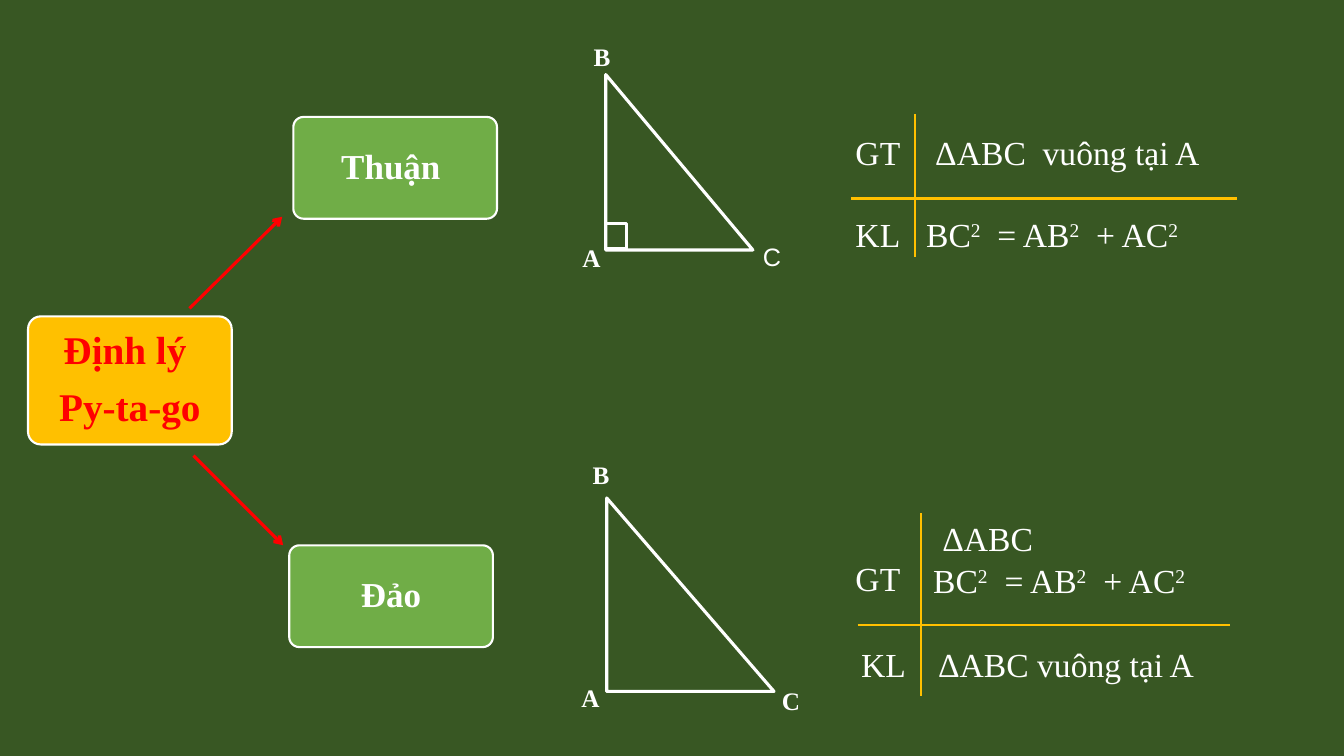
from lxml import etree
from pptx import Presentation
from pptx import util as u
from pptx.dml.color import RGBColor
from pptx.enum import shapes, text
from pptx.oxml.ns import qn

Pt = u.Pt

# Content: a tuple (text, True) is a superscript run
FORMULA = ["BC", ("2", True), "  = AB", ("2", True), "  + AC", ("2", True)]

# Cards: lines, position, size, fill, text colour, type size
CARDS = [
    (["Định lý ", "Py-ta-go"], (20, 226), (145.5, 91.5), "amber", "red", "root"),
    (["Thuận "], (209.5, 83.5), (145.5, 72.7), "green", "white", "branch"),
    (["Đảo"], (206.6, 389.5), (145.5, 72.7), "green", "white", "branch"),
]
ARROWS = [((135.4, 220.3), (201.6, 154.8)), ((138.2, 325.4), (202.3, 389.5))]

# Triangles: left, top, width, height
TRIANGLES = [(432.7, 53.3, 105.1, 125.3), (433.4, 355.7, 119.5, 138.2)]
RIGHT_ANGLE = (432.7, 159.8, 15.1, 18)

# Corner labels: letter, left, top, font, bold
LABELS = [
    ("B", 416.9, 25.9, "serif", True),
    ("A", 409, 169.2, "serif", True),
    ("C", 537.8, 168.5, "sans", False),
    ("B", 416.2, 324.7, "serif", True),
    ("A", 408.2, 483.8, "serif", True),
    ("C", 551.5, 486, "serif", True),
]

# Crossed rules of the two hypothesis / conclusion tables
RULES = [
    ((653.8, 81.4), (653.8, 183.6)), ((607.7, 141.8), (883.4, 141.8)),
    ((658.1, 366.5), (658.1, 496.8)), ((612.7, 446.4), (878.4, 446.4)),
]

# Statements: left, top, width, gap between lines, [(indent, runs)]
STATEMENTS = [
    (604, 90.7, 56, 29.5, [(0, ["GT"]), (0, ["KL"])]),
    (654.5, 90.7, 247, 29.5, [(6.5, ["ΔABC  vuông tại A"]), (0, FORMULA)]),
    (604, 395.1, 56, 0, [(0, ["GT"])]),
    (659.5, 366.5, 244, 1, [(6.5, ["ΔABC"]), (0, FORMULA)]),
    (608, 456.5, 56, 0, [(0, ["KL"])]),
    (663, 456.5, 220, 0, [(0, ["ΔABC vuông tại A"])]),
]

THEME = {
    "board": RGBColor.from_string("385723"),
    "white": RGBColor.from_string("FFFFFF"),
    "amber": RGBColor.from_string("FFC000"),
    "green": RGBColor.from_string("70AD47"),
    "red": RGBColor.from_string("FF0000"),
    "serif": "Times New Roman", "sans": "Arial",
    "root": 28, "branch": 25, "statement": 24, "label": 18,
    "thin": 1.5, "thick": 2.25,
}


def add_run(paragraph, words, size, color="white", font="serif", bold=False):
    run = paragraph.add_run()
    run.text = words
    run.font.size = Pt(THEME[size])
    run.font.name = THEME[font]
    run.font.bold = bold
    run.font.color.rgb = THEME[color]
    return run


def paragraph_at(frame, index):
    return frame.add_paragraph() if index else frame.paragraphs[0]


def add_outline(slide, kind, box, width, fill=None):
    shape = slide.shapes.add_shape(kind, *map(Pt, box))
    shape.shadow.inherit = False
    shape.line.color.rgb = THEME["white"]
    shape.line.width = Pt(THEME[width])
    if fill:
        shape.fill.solid()
        shape.fill.fore_color.rgb = THEME[fill]
    else:
        shape.fill.background()
    return shape


def add_line(slide, start, end, color, width, arrow=False):
    line = slide.shapes.add_connector(
        shapes.MSO_CONNECTOR.STRAIGHT, *map(Pt, start + end))
    line.line.color.rgb = THEME[color]
    line.line.width = Pt(THEME[width])
    if arrow:
        etree.SubElement(line.line._get_or_add_ln(), qn("a:tailEnd"), type="arrow")
    etree.SubElement(line._element.spPr, qn("a:effectLst"))


def add_card(slide, lines, position, size, fill, color, type_size):
    card = add_outline(slide, shapes.MSO_SHAPE.ROUNDED_RECTANGLE,
                       position + size, "thin", fill)
    card.adjustments[0] = 0.1
    frame = card.text_frame
    frame.word_wrap = True
    frame.vertical_anchor = text.MSO_ANCHOR.MIDDLE
    frame.margin_left = frame.margin_right = Pt(3.5)
    frame.margin_top = frame.margin_bottom = Pt(3.5)
    for index, words in enumerate(lines):
        paragraph = paragraph_at(frame, index)
        paragraph.alignment = text.PP_ALIGN.CENTER
        paragraph.line_spacing = 0.9
        paragraph.space_after = Pt(THEME[type_size] * 0.37)
        add_run(paragraph, words, type_size, color, bold=True)


def add_text_frame(slide, left, top, width, height):
    frame = slide.shapes.add_textbox(*map(Pt, (left, top, width, height))).text_frame
    frame.word_wrap = True
    return frame


def add_statement(slide, left, top, width, gap, lines):
    height = 7.2 + 27.6 * len(lines) + gap
    frame = add_text_frame(slide, left, top, width, height)
    for index, (indent, runs) in enumerate(lines):
        paragraph = paragraph_at(frame, index)
        paragraph.space_before = Pt(gap if index else 0)
        paragraph._p.get_or_add_pPr().set("marL", str(Pt(indent)))
        for part in runs:
            words, raised = part if isinstance(part, tuple) else (part, False)
            run = add_run(paragraph, words, "statement")
            if raised:
                run.font._element.set("baseline", "30000")


def main():
    presentation = Presentation()
    presentation.slide_width, presentation.slide_height = Pt(960), Pt(540)
    slide = presentation.slides.add_slide(presentation.slide_layouts[6])
    slide.background.fill.solid()
    slide.background.fill.fore_color.rgb = THEME["board"]

    # Hypothesis and conclusion tables
    for start, end in RULES:
        add_line(slide, start, end, "amber", "thin")
    for statement in STATEMENTS:
        add_statement(slide, *statement)

    # Triangles with their corner labels
    for box in TRIANGLES:
        add_outline(slide, shapes.MSO_SHAPE.RIGHT_TRIANGLE, box, "thick")
    add_outline(slide, shapes.MSO_SHAPE.RECTANGLE, RIGHT_ANGLE, "thick")
    for letter, left, top, font, bold in LABELS:
        frame = add_text_frame(slide, left, top, 28, 29)
        add_run(frame.paragraphs[0], letter, "label", font=font, bold=bold)

    # Theorem map
    for start, end in ARROWS:
        add_line(slide, start, end, "red", "thick", arrow=True)
    for card in CARDS:
        add_card(slide, *card)

    presentation.save("out.pptx")


if __name__ == "__main__":
    main()
